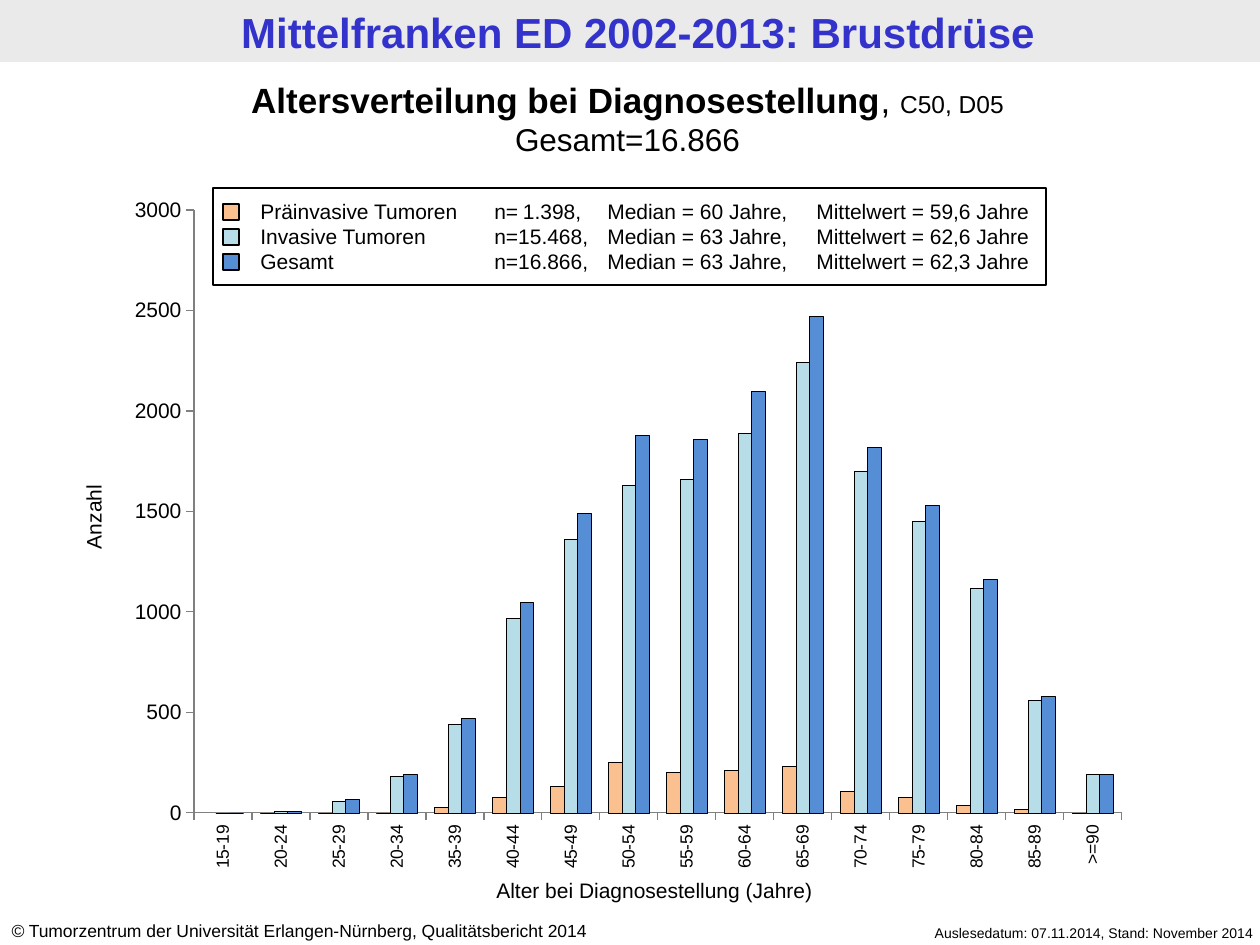
from lxml.etree import SubElement
from pptx import Presentation
from pptx.chart.data import CategoryChartData
from pptx.dml.color import RGBColor
from pptx.enum.chart import XL_CHART_TYPE as ChartType, XL_TICK_MARK as Tick
from pptx.enum.shapes import MSO_SHAPE as Shape
from pptx.enum.text import MSO_ANCHOR as Anchor, PP_ALIGN as Align
from pptx.oxml import parse_xml
from pptx.oxml.ns import nsdecls, qn
from pptx.util import Emu, Pt

PX_PER_INCH = 126
AGES = ["15-19", "20-24", "25-29", "20-34", "35-39", "40-44", "45-49", "50-54",
        "55-59", "60-64", "65-69", "70-74", "75-79", "80-84", "85-89", ">=90"]
TUMOURS = [
    ("Präinvasive Tumoren", "FAC090", "\tn=\t1.398,", "60", "59,6",
     [None, 0, 0, 0, 30, 80, 130, 250, 200, 210, 230, 110, 80, 40, 20, 0]),
    ("Invasive Tumoren", "B7DEE8", "\t\tn=15.468,", "63", "62,6",
     [0, 10, 60, 180, 440, 970, 1360, 1630, 1660, 1890, 2240, 1700, 1450, 1120, 560, 190]),
    ("Gesamt", "558ED5", "\t\tn=16.866,", "63", "62,3",
     [0, 10, 70, 190, 470, 1050, 1490, 1880, 1860, 2100, 2470, 1820, 1530, 1160, 580, 190]),
]
LEGEND_TABS = [(185, "l"), (234, "l"), (321, "r"), (347, "l"), (556, "l")]


def px(length):
    return Emu(round(length * 914400 / PX_PER_INCH))


def color(hex_value):
    return RGBColor.from_string(hex_value)


def style(font, size, hex_value="000000", bold=False, italic=False):
    font.name = "Arial"
    font.size = Pt(size)
    font.color.rgb = color(hex_value)
    font.bold = bold
    font.italic = italic


def add_text(slide, box, lines, align=Align.LEFT):
    label = slide.shapes.add_textbox(*map(px, box))
    frame = label.text_frame
    frame.word_wrap = True
    for index, runs in enumerate(lines):
        paragraph = frame.add_paragraph() if index else frame.paragraphs[0]
        paragraph.alignment = align
        for text, size, *emphasis in runs:
            run = paragraph.add_run()
            run.text = text
            style(run.font, size, bold="b" in emphasis, italic="i" in emphasis)
    return label


def add_box(slide, box, fill=None, line=None):
    rect = slide.shapes.add_shape(Shape.RECTANGLE, *map(px, box))
    rect.shadow.inherit = False
    if fill:
        rect.fill.solid()
        rect.fill.fore_color.rgb = color(fill)
    else:
        rect.fill.background()
    if line:
        rect.line.color.rgb = color(line)
        rect.line.width = Pt(0.75)
    else:
        rect.line.fill.background()
    return rect


def add_header(slide, left, top, width, height):
    band = add_box(slide, (left, top, width, height), "EAEAEA")
    title = slide.shapes.title
    band._element.addnext(title._element)
    title.left, title.top = px(left + 8), px(top + 1)
    title.width, title.height = px(width), px(height)
    frame = title.text_frame
    frame.text = "Mittelfranken ED 2002-2013: Brustdrüse"
    frame.vertical_anchor = Anchor.TOP
    frame.margin_top = frame.margin_bottom = px(5)
    paragraph = frame.paragraphs[0]
    paragraph.alignment = Align.CENTER
    style(paragraph.runs[0].font, 24, "3333CC", bold=True)


def add_heading(slide, left, top, width, height):
    add_text(slide, (left, top, width, height), [
        [("Altersverteilung bei Diagnosestellung", 20, "b"), (", ", 20), ("C50, D05", 14)],
        [("Gesamt=16.866", 18)],
    ], Align.CENTER)


def place_plot(chart, x, y, width, height):
    plot_area = chart._chartSpace.chart.plotArea
    for layout in plot_area.findall(qn("c:layout")):
        plot_area.remove(layout)
    sizes = "".join(f'<c:{tag} val="{value:.4f}"/>'
                    for tag, value in zip("xywh", (x, y, width, height)))
    plot_area.insert(0, parse_xml(
        f'<c:layout {nsdecls("c")}><c:manualLayout><c:layoutTarget val="inner"/>'
        f'<c:xMode val="edge"/><c:yMode val="edge"/>{sizes}</c:manualLayout></c:layout>'))


def format_axis(axis, size):
    axis.has_major_gridlines = False
    axis.major_tick_mark = Tick.OUTSIDE
    axis.minor_tick_mark = Tick.NONE
    axis.format.line.color.rgb = color("808080")
    style(axis.tick_labels.font, size)


def add_age_chart(slide, left, top, width, height):
    data = CategoryChartData()
    data.categories = AGES
    for name, *_, counts in TUMOURS:
        data.add_series(name, counts)
    chart = slide.shapes.add_chart(ChartType.COLUMN_CLUSTERED,
                                   *map(px, (left, top, width, height)), data).chart
    chart.has_legend = False
    chart.has_title = False
    style(chart.font, 12)
    place_plot(chart, 79 / width, 25 / height, 928 / width, 603 / height)
    plot = chart.plots[0]
    plot.gap_width = 124
    plot.overlap = 0
    plot.vary_by_categories = False
    for series, (_, fill, *_) in zip(plot.series, TUMOURS):
        series.format.fill.solid()
        series.format.fill.fore_color.rgb = color(fill)
        series.format.line.color.rgb = color("000000")
        series.format.line.width = Pt(0.25)
    format_axis(chart.category_axis, 10)
    format_axis(chart.value_axis, 12)
    chart.category_axis._element.txPr.bodyPr.set("rot", "-5400000")
    chart.value_axis.minimum_scale = 0
    chart.value_axis.maximum_scale = 3000
    chart.value_axis.major_unit = 500
    add_text(slide, (left + 346, top + 686, 387, 38),
             [[("Alter bei Diagnosestellung (Jahre)", 12)]], Align.CENTER)
    count_label = add_text(slide, (left - 186, top + 313, 329, 38),
                           [[("Anzahl", 12)]], Align.CENTER)
    count_label.rotation = 270


def add_legend(slide, left, top, width, height):
    rows = [[(f"{name}{count}\tMedian = {median} Jahre,\tMittelwert = {mean} Jahre", 12)]
            for name, _, count, median, mean, _ in TUMOURS]
    entries = add_text(slide, (left + 35, top + 4, 809, 89), rows)
    for paragraph in entries.text_frame.paragraphs:
        tab_list = SubElement(paragraph._p.get_or_add_pPr(), qn("a:tabLst"))
        for position, side in LEGEND_TABS:
            SubElement(tab_list, qn("a:tab"), pos=str(px(position)), algn=side)
    add_box(slide, (left, top, width, height), line="000000")
    for index, (_, fill, *_) in enumerate(TUMOURS):
        add_box(slide, (left + 10, top + 16 + 25 * index, 16, 16), fill, "000000")


def add_footer(slide, left, top, width, height):
    add_text(slide, (left + 839, top + 4, 427, 30),
             [[("Auslesedatum: 07.11.2014, Stand: November 2014", 8)]], Align.RIGHT)
    add_text(slide, (left - 1, top, 660, height), [[
        ("©", 10, "i"),
        (" Tumorzentrum der Universität Erlangen-Nürnberg, Qualitätsbericht 2014", 10)]])


def main():
    deck = Presentation()
    deck.slide_width, deck.slide_height = px(1260), px(945)
    slide = deck.slides.add_slide(deck.slide_layouts[5])
    add_header(slide, 0, 0, 1260, 62)
    add_footer(slide, 0, 914, 1260, 34)
    add_heading(slide, -5, 72, 1265, 93)
    add_age_chart(slide, 115, 185, 1028, 699)
    add_legend(slide, 213, 188, 833, 97)
    deck.save("out.pptx")


if __name__ == "__main__":
    main()
